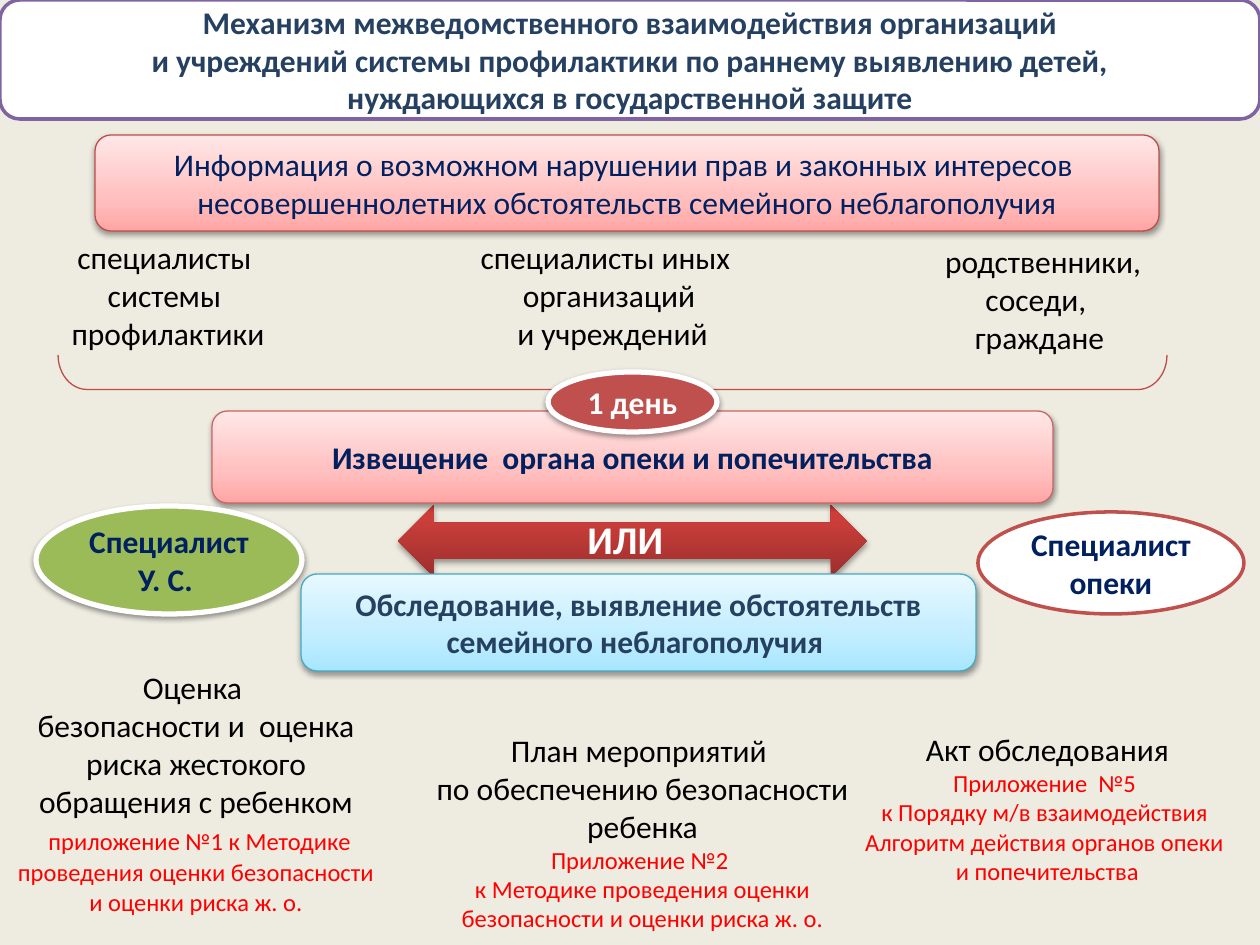
from lxml import etree
from pptx import Presentation, util as u
from pptx.dml.color import RGBColor
from pptx.enum import shapes, text
from pptx.oxml import parse_xml
from pptx.oxml.ns import nsdecls, qn

PX = 914400 / 126
FONT = "Calibri"
KIND = shapes.MSO_SHAPE

# Stops run from the bottom edge upwards: percent, colour
PINK = [(0, "FFA6A5"), (35, "FFC0BF"), (100, "FFE7E7")]
BLUE = [(0, "A7E6FF"), (35, "C1EDFF"), (100, "E7F8FF")]
RED = [(0, "9C2F2D"), (80, "CB3E3A"), (100, "CE3B37")]

# Run styles: size, colour, bold
STYLES = {
    "plain": (18, "000000", False),
    "note": (14, "FF0000", False),
    "navy": (18, "002060", False),
    "navy bold": (18, "002060", True),
    "slate": (18, "254061", True),
    "white": (18, "FFFFFF", True),
    "or": (28, "FFFFFF", True),
}


def color(target, code):
    """Give a fill, or a font, a solid colour."""
    if hasattr(target, "solid"):
        target.solid()
        target.fore_color.rgb = RGBColor.from_string(code)
    else:
        target.color.rgb = RGBColor.from_string(code)


def write(frame, paras, align):
    """Fill a text frame; each paragraph is a list of (style, text) runs."""
    for i, runs in enumerate(paras):
        para = frame.paragraphs[0] if i == 0 else frame.add_paragraph()
        para.alignment = align
        for style, words in runs:
            run = para.add_run()
            run.text = words
            size, code, bold = STYLES[style]
            run.font.name = FONT
            run.font.size = u.Pt(size)
            run.font.bold = bold
            color(run.font, code)
            if style == "or":
                run.font._element.set("cap", "small")


prs = Presentation()
prs.slide_width, prs.slide_height = u.Inches(10), u.Inches(7.5)
slide = prs.slides.add_slide(prs.slide_layouts[6])
color(slide.background.fill, "EEECE1")

# Shapes: kind, place, fill, line colour, line width, shadow, paragraphs
forms = [
    (KIND.LEFT_RIGHT_ARROW, (398, 505, 469, 72), RED, None, 0, True, []),
    (KIND.ROUNDED_RECTANGLE, (301, 574, 675, 97), BLUE, "46AAC5", 0.75, True,
     [[("slate", "Обследование, выявление обстоятельств семейного неблагополучия ")]]),
    (KIND.ROUNDED_RECTANGLE, (95, 135, 1064, 96), PINK, "BF4C48", 0.75, True,
     [[("navy", "Информация о возможном нарушении прав и законных интересов  "
        "несовершеннолетних обстоятельств семейного неблагополучия")]]),
    (KIND.ROUNDED_RECTANGLE, (212, 411, 841, 92), PINK, "C96765", 0.75, True,
     [[("navy bold", "Извещение  органа опеки и попечительства")]]),
    (KIND.RIGHT_BRACE, (578, -165, 69, 1109), None, "BF4C48", 0.75, False, []),
    (KIND.OVAL, (36, 506, 266, 108), "9BBB59", "FFFFFF", 3, True,
     [[("navy bold", "Специалист У. С. ")]]),
    (KIND.ROUNDED_RECTANGLE, (0, 0, 1260, 119), "FFFFFF", "8064A2", 2, False,
     [[("slate", "Механизм межведомственного взаимодействия организаций")],
      [("slate", " и учреждений системы профилактики по раннему выявлению детей, ")],
      [("slate", "нуждающихся в государственной защите")]]),
    (KIND.OVAL, (548, 372, 169, 60), "C0504D", "FFFFFF", 3, True,
     [[("white", "1 день")]]),
    (KIND.OVAL, (978, 512, 266, 102), "FFFFFF", "C0504D", 2, False,
     [[("navy bold", "Специалист опеки")]]),
]

for kind, place, fill, line, width, shadow, paras in forms:
    shape = slide.shapes.add_shape(kind, *[round(v * PX) for v in place])
    props = shape._element.spPr
    if fill is None:
        shape.fill.background()
    elif isinstance(fill, str):
        color(shape.fill, fill)
    else:
        shape.fill.gradient()
        shape.fill.gradient_angle = 90
        stops = props.find(qn("a:gradFill")).find(qn("a:gsLst"))
        for old in list(stops):
            stops.remove(old)
        for pos, code in fill:
            stop = etree.SubElement(stops, qn("a:gs"), pos=str(pos * 1000))
            etree.SubElement(stop, qn("a:srgbClr"), val=code)
    if line:
        color(shape.line.fill, line)
        shape.line.width = u.Pt(width)
    else:
        shape.line.fill.background()
    shape.shadow.inherit = False
    if shadow:
        props.find(qn("a:effectLst")).append(parse_xml(
            f'<a:outerShdw {nsdecls("a")} blurRad="40000" dist="20000" '
            'dir="5400000" rotWithShape="0"><a:srgbClr val="000000">'
            '<a:alpha val="38000"/></a:srgbClr></a:outerShdw>'))
    if kind == KIND.RIGHT_BRACE:
        shape.rotation = 90
        shape.adjustments[0], shape.adjustments[1] = 0.42, 0.49
    if paras:
        shape.text_frame.word_wrap = True
        shape.text_frame.vertical_anchor = text.MSO_ANCHOR.MIDDLE
        write(shape.text_frame, paras, text.PP_ALIGN.CENTER)

# Free text: place, wrap, alignment, paragraphs
MID, LEFT = text.PP_ALIGN.CENTER, text.PP_ALIGN.LEFT
labels = [
    ((1, 232, 334, 127), True, MID,
     [[("plain", "специалисты ")], [("plain", "системы ")],
      [("plain", "профилактики")]]),
    ((924, 236, 231, 127), False, MID,
     [[("plain", " родственники,")], [("plain", "соседи, ")],
      [("plain", "граждане")]]),
    ((447, 232, 324, 127), True, MID,
     [[("plain", "специалисты иных ")], [("plain", "организаций")],
      [("plain", " и учреждений")]]),
    ((-3, 662, 398, 292), True, MID,
     [[("plain", "Оценка ")],
      [("plain", "безопасности и  оценка риска жестокого обращения с ребенком")],
      [("plain", " "), ("note", "приложение №1 к Методике проведения оценки "
                      "безопасности и оценки риска ж. о.")]]),
    ((413, 725, 459, 217), True, MID,
     [[("plain", "План мероприятий ")],
      [("plain", "по обеспечению безопасности ребенка")],
      [("note", "Приложение №2 ")],
      [("note", "к Методике проведения оценки безопасности и оценки риска ж. о.")]]),
    ((851, 724, 393, 170), False, MID,
     [[("plain", "Акт обследования")], [("note", "Приложение  №5 ")],
      [("note", "к Порядку м/в взаимодействия ")],
      [("note", "Алгоритм действия органов опеки ")],
      [("note", "и попечительства")]]),
    ((575, 499, 107, 72), False, LEFT, [[("or", "или")]]),
]

for place, wrap, align, paras in labels:
    box = slide.shapes.add_textbox(*[round(v * PX) for v in place])
    box.text_frame.word_wrap = wrap
    box.text_frame.auto_size = text.MSO_AUTO_SIZE.SHAPE_TO_FIT_TEXT
    write(box.text_frame, paras, align)

prs.save("out.pptx")
